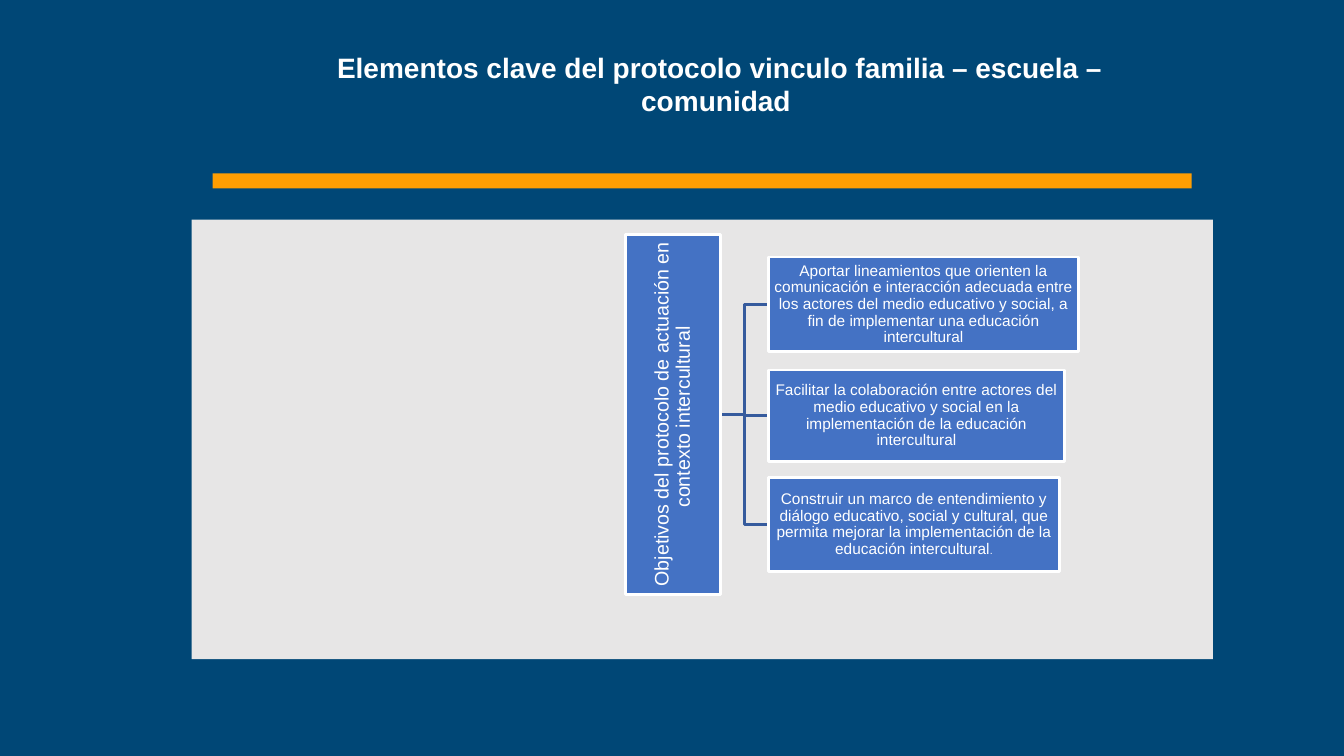
from lxml import etree
from pptx import Presentation
from pptx import util as u
from pptx.dml.color import RGBColor
from pptx.enum import shapes, text
from pptx.oxml import ns

NAVY, ORANGE, GRAY, BLUE, LINK, WHITE = "004776", "FE9E02", "E7E6E6", "4472C4", "365B9D", "FFFFFF"
TITLE = "Elementos clave del protocolo vinculo familia – escuela –comunidad "
ROOT = "Objetivos del protocolo de actuación en contexto intercultural "
BRANCHES = [
    (2.55, 3.08, 0.94, [("Aportar lineamientos que orienten la comunicación e interacción adecuada entre "
                         "los actores del medio educativo y social, a fin de implementar una educación "
                         "intercultural", 11)]),
    (3.67, 2.94, 0.91, [("Facilitar la colaboración entre actores del medio educativo y social en la "
                         "implementación de la educación intercultural", 11)]),
    (4.74, 2.89, 0.93, [("Construir un marco de entendimiento y diálogo educativo, social y cultural, que "
                         "permita mejorar la implementación de la educación intercultural", 11),
                        (".", 7.5)]),
]


def color(value):
    """Turn a hex string into a colour."""
    return RGBColor.from_string(value)


def inches(*lengths):
    """Turn numbers into lengths in inches."""
    return [u.Inches(length) for length in lengths]


def write(shape, runs, inset=0.01, spacing=0.9, anchor=text.MSO_ANCHOR.MIDDLE, bold=False):
    """Write one centred white paragraph of (wording, size) runs."""
    frame = shape.text_frame
    margin = u.Inches(inset)
    frame_format = {"word_wrap": True, "vertical_anchor": anchor, "margin_left": margin,
                    "margin_right": margin, "margin_top": margin, "margin_bottom": margin}
    for name, value in frame_format.items():
        setattr(frame, name, value)
    paragraph = frame.paragraphs[0]
    paragraph.alignment = text.PP_ALIGN.CENTER
    paragraph.line_spacing = spacing
    for wording, size in runs:
        run = paragraph.add_run()
        run.text = wording
        for name, value in {"name": "Arial", "size": u.Pt(size), "bold": bold}.items():
            setattr(run.font, name, value)
        run.font.color.rgb = color(WHITE)


def add_box(slide, box, fill, outline=None):
    """Add a flat rectangle with an optional outline."""
    shape = slide.shapes.add_shape(shapes.MSO_SHAPE.RECTANGLE, *inches(*box))
    shape.shadow.inherit = False
    shape.fill.solid()
    shape.fill.fore_color.rgb = color(fill)
    if outline:
        shape.line.color.rgb = color(outline)
        shape.line.width = u.Pt(2)
    else:
        shape.line.fill.background()
    return shape


def add_link(slide, start, end):
    """Draw an elbow line between two points."""
    link = slide.shapes.add_connector(shapes.MSO_CONNECTOR.ELBOW, *inches(*start, *end))
    link.line.color.rgb = color(LINK)
    link.line.width = u.Pt(2)
    etree.SubElement(link._element.spPr, ns.qn("a:effectLst"))


def add_heading(slide, left, top, width, height):
    """Place the title and the orange rule below it."""
    title = slide.shapes.add_textbox(*inches(left, top, width, height))
    write(title, [(TITLE, 20)], inset=0, spacing=1.0, anchor=text.MSO_ANCHOR.TOP, bold=True)
    add_box(slide, (left - 0.64, top + 1.22, 9.71, 0.15), ORANGE)


def add_objectives(slide, left, top, width, height):
    """Place the gray panel with the root objective and its branches."""
    add_box(slide, (left, top, width, height), GRAY)
    root_length, root_thickness = 3.57, 0.94
    center_x, center_y = left + 4.775, top + 1.93
    branch_left = left + 5.72
    start = (center_x + root_thickness / 2, center_y)
    for branch_top, _, branch_height, _ in BRANCHES:
        add_link(slide, start, (branch_left, branch_top + branch_height / 2))
    root = add_box(slide, (center_x - root_length / 2, center_y - root_thickness / 2,
                           root_length, root_thickness), BLUE, WHITE)
    root.rotation = 270
    write(root, [(ROOT, 14)])
    for branch_top, branch_width, branch_height, runs in BRANCHES:
        branch = add_box(slide, (branch_left, branch_top, branch_width, branch_height), BLUE, WHITE)
        write(branch, runs)


def main():
    """Build and save the slide."""
    presentation = Presentation()
    presentation.slide_width, presentation.slide_height = inches(13.33, 7.5)
    slide = presentation.slides.add_slide(presentation.slide_layouts[6])
    slide.background.fill.solid()
    slide.background.fill.fore_color.rgb = color(NAVY)
    add_heading(slide, 2.75, 0.5, 8.78, 0.67)
    add_objectives(slide, 1.9, 2.18, 10.13, 4.36)
    presentation.save("out.pptx")


if __name__ == "__main__":
    main()
